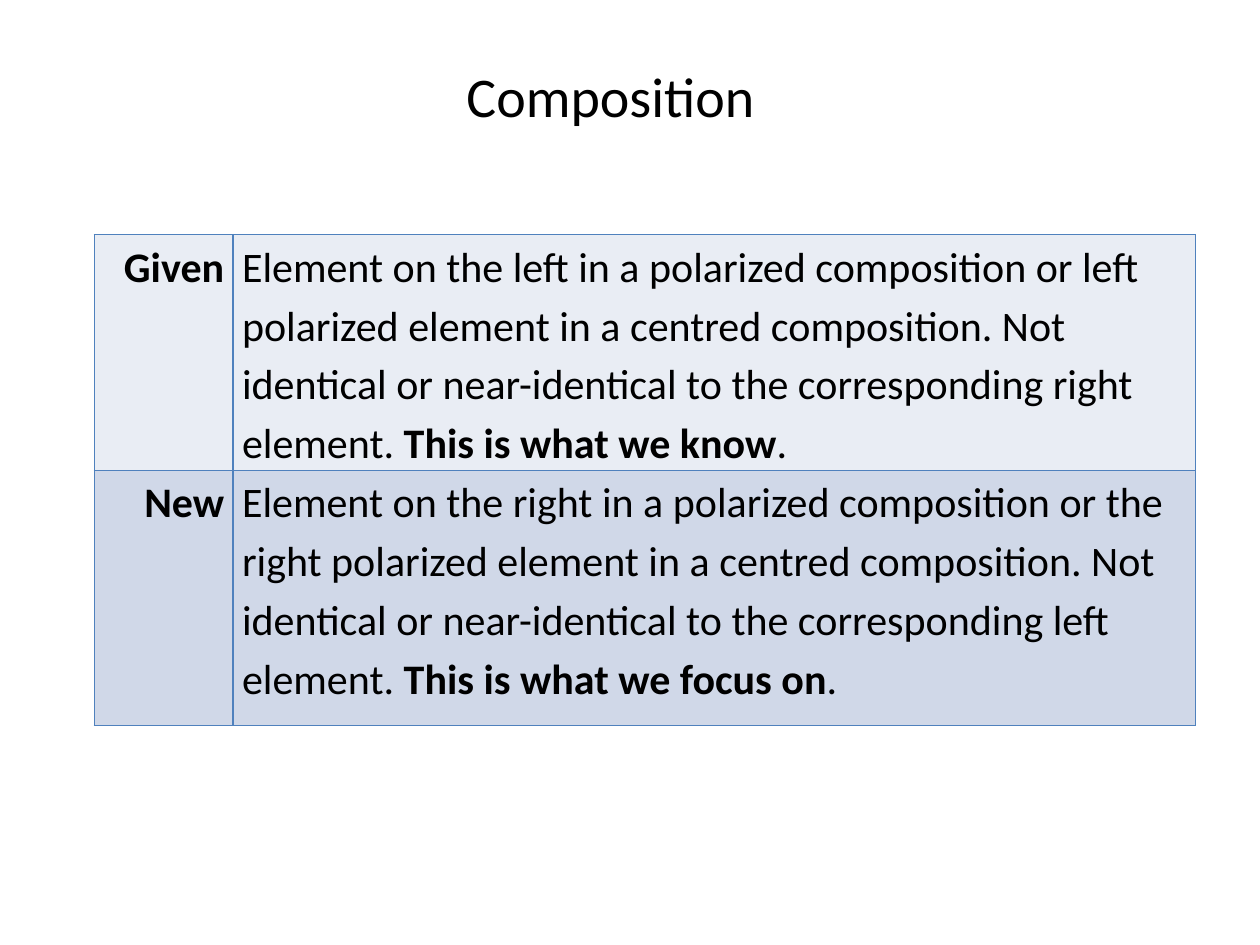
from lxml.etree import SubElement
from pptx import Presentation
from pptx.dml.color import RGBColor
from pptx.enum.text import MSO_ANCHOR as Anchor, PP_ALIGN as Align
from pptx.oxml.ns import qn
from pptx.util import Cm, Pt

FONT = "Calibri"
BLACK = "000000"
BORDER = "4F81BD"

# Term, definition, key message, row fill, row height in cm
ROWS = [
    ("Given",
     "Element on the left in a polarized composition or left polarized element "
     "in a centred composition. Not identical or near-identical to the "
     "corresponding right element. ",
     "This is what we know", "E9EDF4", 4.75),
    ("New",
     "Element on the right in a polarized composition or the right polarized "
     "element in a centred composition. Not identical or near-identical to the "
     "corresponding left element. ",
     "This is what we focus on", "D0D8E8", 5.15),
]


def color(hex_string):
    return RGBColor.from_string(hex_string)


def style_paragraph(paragraph, size, align):
    paragraph.alignment = align
    paragraph.font.name = FONT
    paragraph.font.size = Pt(size)
    paragraph.font.color.rgb = color(BLACK)


def add_border(cell, hex_string, width):
    properties = cell._tc.get_or_add_tcPr()
    # Border lines must come before the fill
    for index, side in enumerate(("lnL", "lnR", "lnT", "lnB")):
        line = SubElement(properties, qn(f"a:{side}"), w=str(Pt(width)))
        fill = SubElement(line, qn("a:solidFill"))
        SubElement(fill, qn("a:srgbClr"), val=hex_string)
        properties.insert(index, line)


def fill_cell(cell, runs, fill, align):
    """Write (text, bold) runs into a bordered, filled cell."""
    cell.margin_left = cell.margin_right = Cm(0.18)
    cell.margin_top = cell.margin_bottom = 0
    cell.fill.solid()
    cell.fill.fore_color.rgb = color(fill)
    add_border(cell, BORDER, 1)
    paragraph = cell.text_frame.paragraphs[0]
    style_paragraph(paragraph, 24, align)
    paragraph.line_spacing = 1.15
    for text, bold in runs:
        run = paragraph.add_run()
        run.text = text
        run.font.bold = bold


def add_title(slide, left, top, width, height, text):
    shape = slide.shapes.add_textbox(Cm(left), Cm(top), Cm(width), Cm(height))
    frame = shape.text_frame
    frame.word_wrap = True
    frame.vertical_anchor = Anchor.MIDDLE
    paragraph = frame.paragraphs[0]
    paragraph.text = text
    style_paragraph(paragraph, 32, Align.CENTER)


def add_definitions(slide, left, top, width, term_width):
    height = sum(row[-1] for row in ROWS)
    table = slide.shapes.add_table(
        len(ROWS), 2, Cm(left), Cm(top), Cm(width), Cm(height)).table
    table.first_row = table.horz_banding = False
    table.columns[0].width = Cm(term_width)
    table.columns[1].width = Cm(width - term_width)
    for index, (term, definition, message, fill, row_height) in enumerate(ROWS):
        table.rows[index].height = Cm(row_height)
        fill_cell(table.cell(index, 0), [(term, True)], fill, Align.RIGHT)
        fill_cell(table.cell(index, 1),
                  [(definition, False), (message, True), (".", False)],
                  fill, Align.LEFT)


def main():
    presentation = Presentation()
    presentation.slide_width = Cm(25.4)
    presentation.slide_height = Cm(19.05)
    slide = presentation.slides.add_slide(presentation.slide_layouts[6])
    # Heading
    add_title(slide, 2.9, 0.74, 18.82, 2.36, "Composition")
    # Table of terms
    add_definitions(slide, 1.9, 4.73, 22.2, 2.8)
    presentation.save("out.pptx")


if __name__ == "__main__":
    main()
